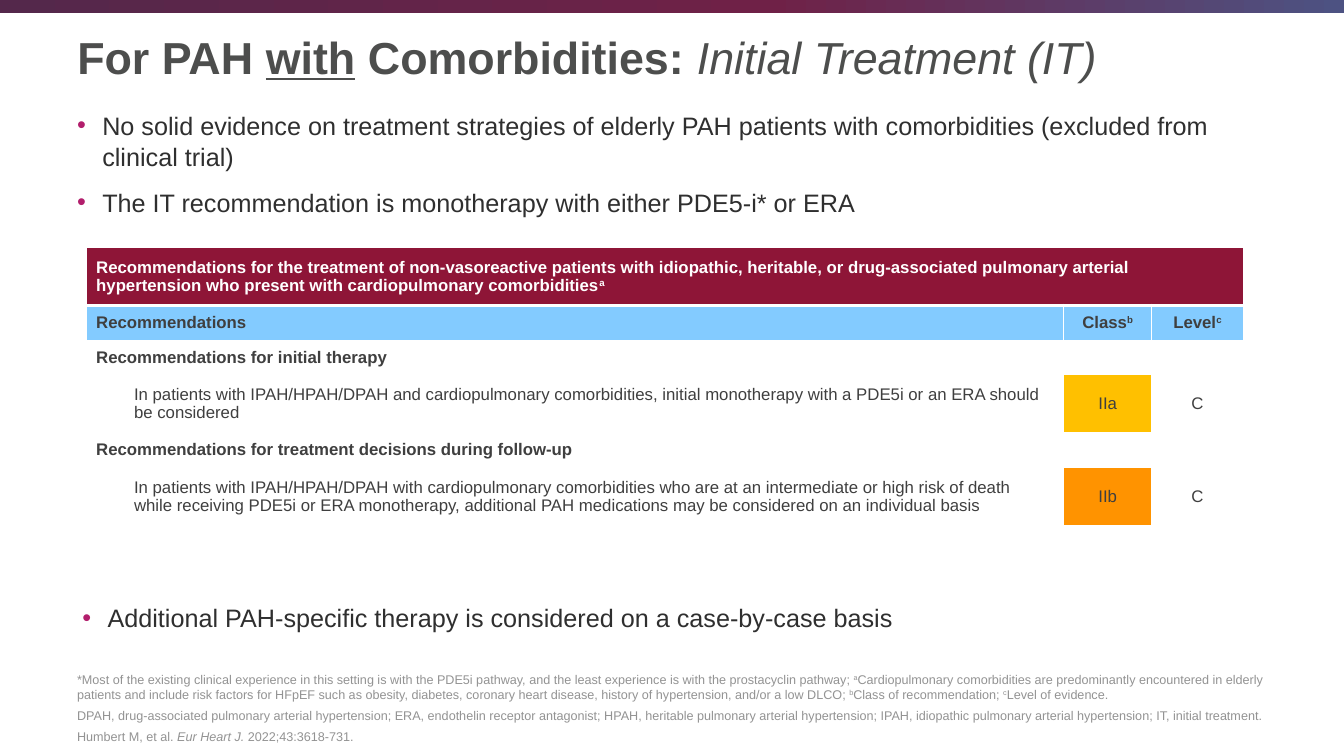
from copy import deepcopy

from lxml.etree import SubElement
from pptx import Presentation
from pptx.dml.color import RGBColor
from pptx.enum.shapes import MSO_SHAPE
from pptx.enum.text import MSO_ANCHOR, MSO_AUTO_SIZE, PP_ALIGN
from pptx.oxml.ns import qn
from pptx.util import Pt

PX = 9525
FONT = "Arial"
RECTANGLE = MSO_SHAPE.RECTANGLE
TOP, MIDDLE, BOTTOM = MSO_ANCHOR.TOP, MSO_ANCHOR.MIDDLE, MSO_ANCHOR.BOTTOM
LEFT, CENTER = PP_ALIGN.LEFT, PP_ALIGN.CENTER
FIXED = MSO_AUTO_SIZE.NONE
TITLE_ONLY = 5

TITLE = [("For PAH ", "b"), ("with", "bu"), (" Comorbidities: ", "b"),
         ("Initial Treatment (IT)", "i")]
EVIDENCE = [
    "No solid evidence on treatment strategies of elderly PAH patients with comorbidities "
    "(excluded from clinical trial)",
    "The IT recommendation is monotherapy with either PDE5-i* or ERA",
]
ADDITIONAL = ["Additional PAH-specific therapy is considered on a case-by-case basis"]
FOOTNOTES = [
    [("*Most of the existing clinical experience in this setting is with the PDE5i pathway, "
      "and the least experience is with the prostacyclin pathway; ", ""), ("a", "^"),
     ("Cardiopulmonary comorbidities are predominantly encountered in elderly patients and "
      "include risk factors for HFpEF such as obesity, diabetes, coronary heart disease, "
      "history of hypertension, and/or a low DLCO; ", ""), ("b", "^"),
     ("Class of recommendation; ", ""), ("c", "^"), ("Level of evidence.", "")],
    [("DPAH, drug-associated pulmonary arterial hypertension; ERA, endothelin receptor "
      "antagonist; HPAH, heritable pulmonary arterial hypertension; IPAH, idiopathic "
      "pulmonary arterial hypertension; IT, initial treatment.", "")],
    [("Humbert M, et al. ", ""), ("Eur Heart J. ", "i"), ("2022;43:3618-731.", "")],
]

COLUMNS = [931, 84, 87]
ROW_HEIGHTS = [55, 33, 33, 55, 33, 56, 47]
MERGED_ROWS = [0, 6]
ADVICE_ROWS = [3, 5]
ROWS = [
    [[("Recommendations for the treatment of non-vasoreactive patients with idiopathic, "
       "heritable, or drug-associated pulmonary arterial hypertension who present with "
       "cardiopulmonary comorbidities", "b"), ("a", "b^")], [], []],
    [[("Recommendations", "b")], [("Class", "b"), ("b", "b^")], [("Level", "b"), ("c", "b^")]],
    [[("Recommendations for initial therapy", "b")], [], []],
    [[("In patients with IPAH/HPAH/DPAH and cardiopulmonary comorbidities, initial "
       "monotherapy with a PDE5i or an ERA should be considered", "")],
     [("IIa", "")], [("C", "")]],
    [[("Recommendations for treatment decisions during follow-up", "b")], [], []],
    [[("In patients with IPAH/HPAH/DPAH with cardiopulmonary comorbidities who are at an "
       "intermediate or high risk of death while receiving PDE5i or ERA monotherapy, "
       "additional PAH medications may be considered on an individual basis", "")],
     [("IIb", "")], [("C", "")]],
    [[], [], []],
]
FILLS = {(0, 0): "8E1537", (1, 0): "83CBFF", (1, 1): "83CBFF", (1, 2): "83CBFF",
         (3, 1): "FFC000", (5, 1): "FF9300"}


def rgb(value):
    """Turn a hex string into a colour."""
    return RGBColor.from_string(value)


def scale(box):
    """Turn a box of px lengths into EMU."""
    return [length * PX for length in box]


def write(para, spans, size, colour):
    """Add styled spans: b bold, i italic, u underline, ^ superscript."""
    for text, style in spans:
        span = para.add_run()
        span.text = text
        font = span.font
        font.name, font.size, font.color.rgb = FONT, Pt(size), rgb(colour)
        font.bold, font.italic, font.underline = "b" in style, "i" in style, "u" in style
        if "^" in style:
            font._element.set("baseline", "30000")


def add_frame(page, box, anchor):
    """Add a wrapping text box and return its text frame."""
    frame = page.shapes.add_textbox(*scale(box)).text_frame
    frame.word_wrap, frame.auto_size, frame.vertical_anchor = True, FIXED, anchor
    return frame


def add_band(page, box):
    """Draw the gradient band across the top."""
    band = page.shapes.add_shape(RECTANGLE, *scale(box))
    band.shadow.inherit = False
    band.line.fill.background()
    band.fill.gradient()
    band.fill.gradient_angle = 0
    stop_list = band._element.spPr.find(qn("a:gradFill")).find(qn("a:gsLst"))
    stop_list.append(deepcopy(stop_list[-1]))
    stops = [(0, "54284B"), (0.57, "6F2147"), (1, "4D5282")]
    for stop, (position, colour) in zip(band.fill.gradient_stops, stops):
        stop.position, stop.color.rgb = position, rgb(colour)


def add_title(page, box):
    """Place and format the title placeholder."""
    title = page.shapes.title
    title.left, title.top, title.width, title.height = scale(box)
    frame = title.text_frame
    frame.word_wrap, frame.auto_size, frame.vertical_anchor = True, FIXED, TOP
    para = frame.paragraphs[0]
    para.alignment = LEFT
    write(para, TITLE, 32, "4D4E4D")


def add_bullets(page, box, lines):
    """Add a bulleted list."""
    frame = add_frame(page, box, TOP)
    frame.text = "\n".join(lines)
    for para in frame.paragraphs:
        para.space_before, para.line_spacing = Pt(10), 1.04
        font = para.runs[0].font
        font.name, font.size, font.color.rgb = FONT, Pt(18), rgb("2F2F2F")
        properties = para._p.get_or_add_pPr()
        properties.set("marL", str(24 * PX))
        properties.set("indent", str(-24 * PX))
        colour = SubElement(properties, qn("a:buClr"))
        SubElement(colour, qn("a:srgbClr"), val="B21E6C")
        SubElement(properties, qn("a:buFont"), typeface=FONT)
        SubElement(properties, qn("a:buChar"), char="•")


def add_borders(cell, bottom):
    """Give a cell white borders, with the bottom width in points."""
    properties = cell._tc.get_or_add_tcPr()
    for side, width in (("L", 1), ("R", 1), ("T", 1), ("B", bottom)):
        line = SubElement(properties, qn(f"a:ln{side}"), w=str(Pt(width)))
        fill = SubElement(line, qn("a:solidFill"))
        SubElement(fill, qn("a:srgbClr"), val="FFFFFF")


def format_cell(cell, row, column):
    """Fill in and format one cell of the recommendations table."""
    add_borders(cell, 3 if row == 0 else 1)
    if (row, column) in FILLS:
        cell.fill.solid()
        cell.fill.fore_color.rgb = rgb(FILLS[row, column])
    else:
        cell.fill.background()
    cell.vertical_anchor = MIDDLE
    para = cell.text_frame.paragraphs[0]
    para.alignment = CENTER if column else LEFT
    if row in ADVICE_ROWS and column == 0:
        para._p.get_or_add_pPr().set("marL", str(36 * PX))
    write(para, ROWS[row][column], 12, "3F3F3F" if row else "FFFFFF")
    if not ROWS[row][column]:
        SubElement(para._p, qn("a:endParaRPr"), sz="1200")


def add_recommendations(page, left, top):
    """Add the recommendations table."""
    box = scale([left, top, sum(COLUMNS), sum(ROW_HEIGHTS)])
    table = page.shapes.add_table(len(ROWS), len(COLUMNS), *box).table
    table.first_row = table.horz_banding = False
    for column, width in zip(table.columns, COLUMNS):
        column.width = width * PX
    for row, height in enumerate(ROW_HEIGHTS):
        table.rows[row].height = height * PX
        for column in range(len(COLUMNS)):
            format_cell(table.cell(row, column), row, column)
    for row in MERGED_ROWS:
        table.cell(row, 0).merge(table.cell(row, len(COLUMNS) - 1))


def add_footnotes(page, box):
    """Add the footnotes, resting on the bottom of the box."""
    frame = add_frame(page, box, BOTTOM)
    for index, spans in enumerate(FOOTNOTES):
        para = frame.add_paragraph() if index else frame.paragraphs[0]
        para.space_after = Pt(4)
        write(para, spans, 9, "939393")


def main():
    """Build the deck and save it."""
    deck = Presentation()
    deck.slide_width, deck.slide_height = scale([1280, 720])
    page = deck.slides.add_slide(deck.slide_layouts[TITLE_ONLY])
    add_band(page, [0, 0, 1280, 12])
    add_footnotes(page, [64, 667, 1152, 46])
    add_title(page, [64, 23, 1128, 125])
    add_bullets(page, [64, 99, 1128, 125], EVIDENCE)
    add_recommendations(page, 82, 236)
    add_bullets(page, [69, 568, 1128, 125], ADDITIONAL)
    deck.save("out.pptx")


if __name__ == "__main__":
    main()
